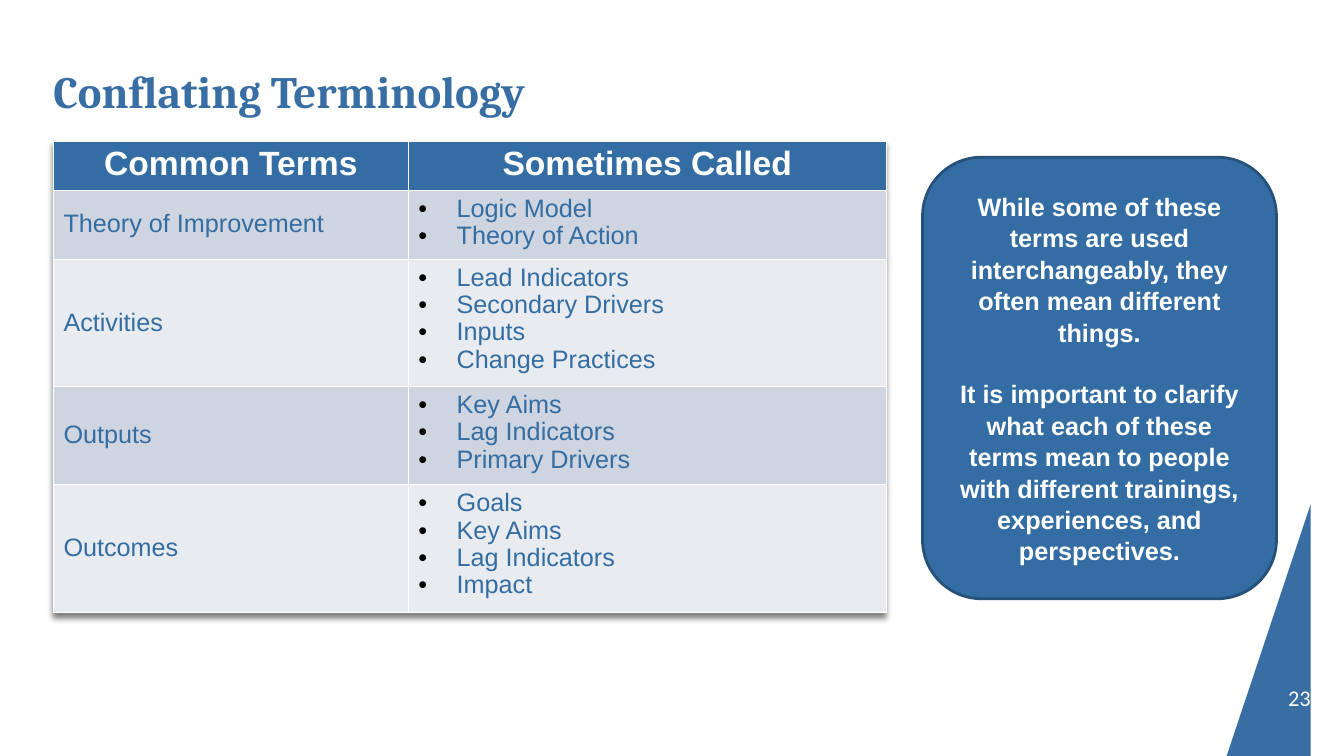
"""Build the slide on conflating terminology: a table of terms and a callout."""
from lxml.etree import SubElement
from pptx import Presentation
from pptx.dml.color import RGBColor
from pptx.enum.shapes import MSO_SHAPE as Shape
from pptx.enum.text import MSO_ANCHOR as Anchor, PP_ALIGN as Align
from pptx.oxml import parse_xml
from pptx.oxml.ns import nsdecls, qn
from pptx.util import Inches, Pt

BLUE, TITLE_BLUE, TERM_BLUE = "346DA3", "386EA3", "346DA2"
WHITE, BANDS = "FFFFFF", ("CED4E0", "E8EBF0")
TERMS = {
    "Theory of Improvement": ["Logic Model", "Theory of Action"],
    "Activities": ["Lead Indicators", "Secondary Drivers", "Inputs", "Change Practices"],
    "Outputs": ["Key Aims", "Lag Indicators", "Primary Drivers"],
    "Outcomes": ["Goals", "Key Aims", "Lag Indicators", "Impact"],
}
ADVICE = [
    "While some of these terms are used interchangeably, they often mean different things.",
    "It is important to clarify what each of these terms mean to people with "
    "different trainings, experiences, and perspectives.",
]


def paint(color_format, color):
    """Give a fill, line fill or font a solid colour."""
    if hasattr(color_format, "solid"):
        color_format.solid()
        color_format = color_format.fore_color
    else:
        color_format = color_format.color
    color_format.rgb = RGBColor.from_string(color)


def write(frame, lines, color, size, font="Arial", bold=False, align=Align.LEFT,
          spacing=1.0, gap=0, bullet=False):
    """Fill a text frame with one formatted paragraph per line."""
    for index, line in enumerate(lines):
        paragraph = frame.add_paragraph() if index else frame.paragraphs[0]
        paragraph.text = line
        if bullet:
            properties = paragraph._p.get_or_add_pPr()
            properties.set("marL", str(Inches(0.38)))
            properties.set("indent", str(-Inches(0.38)))
            bullet_color = SubElement(properties, qn("a:buClr"))
            SubElement(bullet_color, qn("a:srgbClr"), val="000000")
            SubElement(properties, qn("a:buFont"), typeface="Arial")
            SubElement(properties, qn("a:buChar"), char="•")
        paragraph.alignment = align
        paragraph.line_spacing = spacing
        if index and gap:
            paragraph.space_before = Pt(gap)
        for name, value in {"name": font, "size": Pt(size), "bold": bold}.items():
            setattr(paragraph.font, name, value)
        paint(paragraph.font, color)


deck = Presentation()
deck.slide_width, deck.slide_height = Inches(13.33), Inches(7.5)
slide = deck.slides.add_slide(deck.slide_layouts[5])
shapes = slide.shapes

outline = shapes.build_freeform(13.33, 4.91, scale=Inches(1))
outline.add_line_segments([(12.07, 7.5), (13.33, 7.5)], close=True)
corner = outline.convert_to_shape()
corner.shadow.inherit = False
paint(corner.fill, TITLE_BLUE)
corner.line.fill.background()

title = shapes.title
title_place = {"left": 0.53, "top": 0.63, "width": 10.97, "height": 0.54}
for side, length in title_place.items():
    setattr(title, side, Inches(length))
page_number = shapes.add_textbox(Inches(12.01), Inches(6.75), Inches(0.99), Inches(0.3))
flush = {"margin_left": 0, "margin_top": 0, "margin_right": 0, "margin_bottom": 0,
         "word_wrap": True}
for box, anchor in ((title, Anchor.MIDDLE), (page_number, Anchor.BOTTOM)):
    for name, value in {**flush, "vertical_anchor": anchor}.items():
        setattr(box.text_frame, name, value)
write(title.text_frame, ["Conflating Terminology"], TITLE_BLUE, 32, "Cambria", bold=True)
write(page_number.text_frame, ["23"], WHITE, 16, "Calibri", align=Align.RIGHT)

heights = [0.47] + [0.1 + 0.28 * len(aliases) for aliases in TERMS.values()]
table = shapes.add_table(len(heights), 2, Inches(0.53), Inches(1.4),
                         Inches(8.26), Inches(sum(heights))).table
for column, width in zip(table.columns, (3.52, 4.74)):
    column.width = Inches(width)
for row, height in zip(table.rows, heights):
    row.height = Inches(height)
table._tbl.tblPr.insert(0, parse_xml(
    f'<a:effectLst {nsdecls("a")}><a:outerShdw blurRad="50800" dist="38100" dir="5400000">'
    '<a:srgbClr val="000000"><a:alpha val="50000"/></a:srgbClr>'
    '</a:outerShdw></a:effectLst>'))

for column, heading in enumerate(("Common Terms", "Sometimes Called")):
    cell = table.cell(0, column)
    paint(cell.fill, BLUE)
    write(cell.text_frame, [heading], WHITE, 24, bold=True, align=Align.CENTER, spacing=0.97)
for row, (term, aliases) in enumerate(TERMS.items(), start=1):
    for column, lines in enumerate(([term], aliases)):
        cell = table.cell(row, column)
        paint(cell.fill, BANDS[(row - 1) % 2])
        cell.vertical_anchor = Anchor.TOP if column else Anchor.MIDDLE
        write(cell.text_frame, lines, TERM_BLUE, 18, spacing=0.97, bullet=column == 1)

callout = shapes.add_shape(Shape.ROUNDED_RECTANGLE, Inches(9.15), Inches(1.56),
                           Inches(3.51), Inches(4.38))
callout.shadow.inherit = False
paint(callout.fill, BLUE)
paint(callout.line.fill, "265179")
callout.line.width = Pt(2)
callout.text_frame.word_wrap = True
callout.text_frame.vertical_anchor = Anchor.MIDDLE
write(callout.text_frame, ADVICE, WHITE, 18, bold=True, align=Align.CENTER,
      spacing=1.04, gap=21.6)

deck.save("out.pptx")
